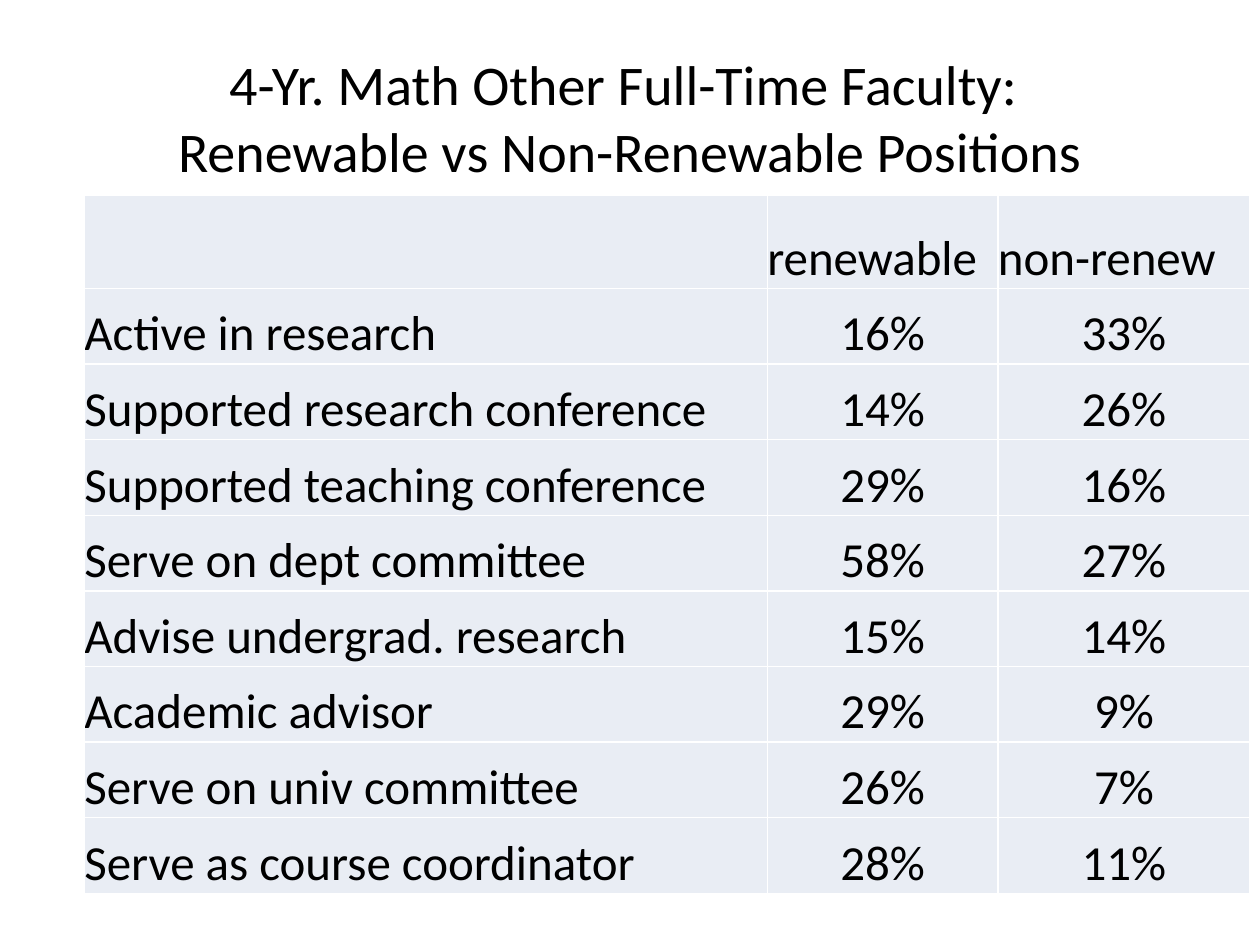
from typing import NamedTuple

import lxml.etree
import pptx
import pptx.dml.color
import pptx.enum.text
import pptx.oxml.ns
import pptx.util

Inches = pptx.util.Inches
Pt = pptx.util.Pt
Align = pptx.enum.text.PP_ALIGN
Anchor = pptx.enum.text.MSO_ANCHOR

FONT = "Calibri"
BLACK, WHITE, PALE_BLUE = "000000", "FFFFFF", "E9EDF4"
TITLE_LINES = ("4-Yr. Math Other Full-Time Faculty: ",
               "Renewable vs Non-Renewable Positions")
COLUMN_WIDTHS = (5.42, 1.83, 2)
HEADER_HEIGHT, ROW_HEIGHT = 0.74, 0.6


class Row(NamedTuple):
    activity: str
    renewable: str
    non_renewable: str


HEADER = Row("", "renewable", "non-renew")
ROWS = [
    Row("Active in research", "16%", "33%"),
    Row("Supported research conference", "14%", "26%"),
    Row("Supported teaching conference", "29%", "16%"),
    Row("Serve on dept committee", "58%", "27%"),
    Row("Advise undergrad. research", "15%", "14%"),
    Row("Academic advisor", "29%", "9%"),
    Row("Serve on univ committee", "26%", "7%"),
    Row("Serve as course coordinator", "28%", "11%"),
]


def rgb(color: str) -> pptx.dml.color.RGBColor:
    return pptx.dml.color.RGBColor.from_string(color)


def add_run(p, text: str, size: float) -> None:
    r = p.add_run()
    r.text = text
    r.font.name = FONT
    r.font.size = Pt(size)
    r.font.color.rgb = rgb(BLACK)


def set_borders(cell, color: str, width: float) -> None:
    """Draw all four cell edges; they must precede the fill in the XML."""
    qn = pptx.oxml.ns.qn
    tc_pr = cell._tc.get_or_add_tcPr()
    for i, edge in enumerate(("a:lnL", "a:lnR", "a:lnT", "a:lnB")):
        ln = lxml.etree.Element(qn(edge), w=str(Pt(width)))
        fill = lxml.etree.SubElement(ln, qn("a:solidFill"))
        lxml.etree.SubElement(fill, qn("a:srgbClr"), val=color)
        tc_pr.insert(i, ln)


def fill_cell(cell, text: str, align: Align) -> None:
    cell.fill.solid()
    cell.fill.fore_color.rgb = rgb(PALE_BLUE)
    set_borders(cell, WHITE, 1)
    cell.vertical_anchor = Anchor.BOTTOM
    cell.margin_left = cell.margin_right = 0
    cell.margin_top = cell.margin_bottom = 0
    if text:
        p = cell.text_frame.paragraphs[0]
        p.alignment = align
        add_run(p, text, 28)


def add_title(s) -> None:
    sp = s.shapes.title
    sp.left, sp.top = Inches(0.5), Inches(0.3)
    sp.width, sp.height = Inches(9), Inches(1.25)
    tf = sp.text_frame
    tf.word_wrap = True
    tf.vertical_anchor = Anchor.MIDDLE
    p = tf.paragraphs[0]
    p.alignment = Align.CENTER
    for i, line in enumerate(TITLE_LINES):
        if i:
            p.add_line_break()
        add_run(p, line, 32)


def add_faculty_table(s) -> None:
    rows = [HEADER, *ROWS]
    height = HEADER_HEIGHT + ROW_HEIGHT * len(ROWS)
    table = s.shapes.add_table(
        len(rows), len(COLUMN_WIDTHS), Inches(0.67), Inches(1.55),
        Inches(sum(COLUMN_WIDTHS)), Inches(height)).table
    table.first_row = table.horz_banding = False
    for column, width in zip(table.columns, COLUMN_WIDTHS):
        column.width = Inches(width)
    for i, row in enumerate(rows):
        table.rows[i].height = Inches(ROW_HEIGHT if i else HEADER_HEIGHT)
        for j, text in enumerate(row):
            fill_cell(table.cell(i, j), text,
                      Align.CENTER if i and j else Align.LEFT)


def main() -> None:
    prs = pptx.Presentation()
    prs.slide_width, prs.slide_height = Inches(10), Inches(7.5)
    s = prs.slides.add_slide(prs.slide_layouts.get_by_name("Title Only"))
    add_title(s)
    add_faculty_table(s)
    prs.save("out.pptx")


if __name__ == "__main__":
    main()
